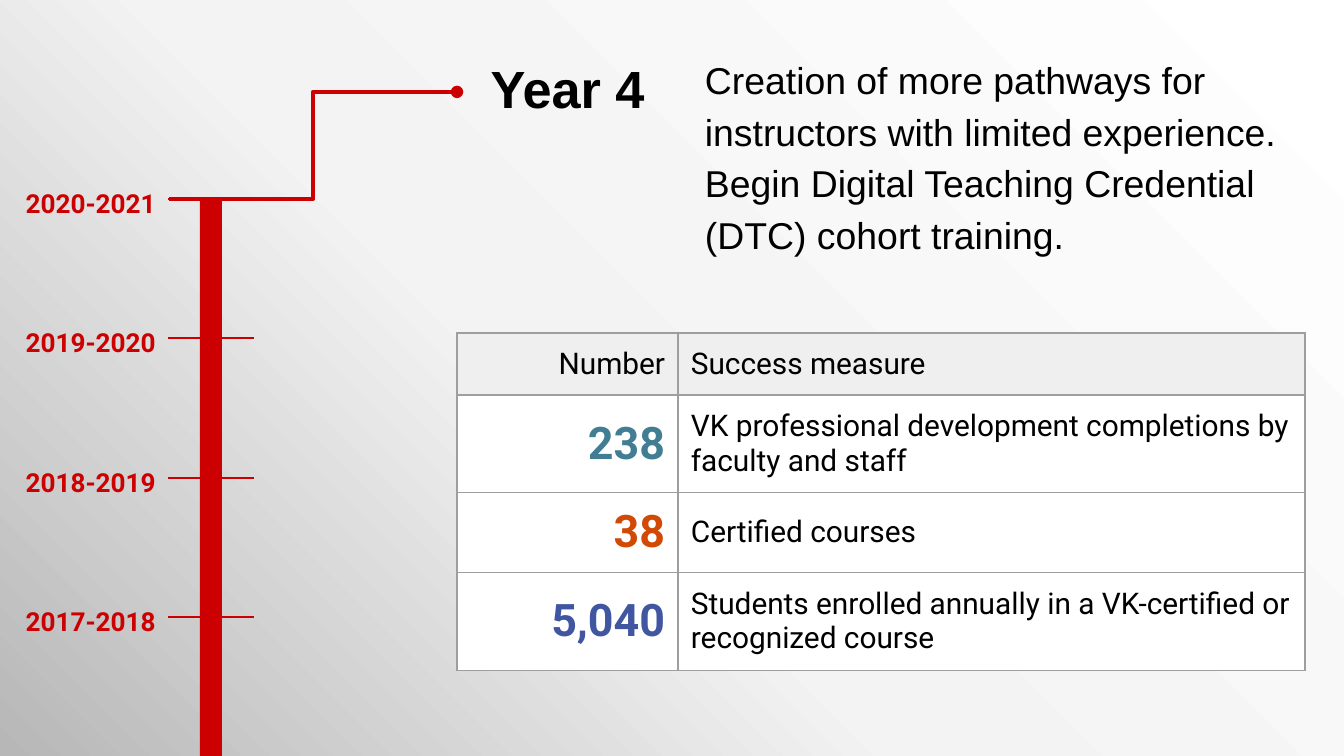
"""Builds the Year 4 timeline slide with its table of success measures."""
import copy

import lxml.etree
import pptx
import pptx.dml.color
import pptx.enum.shapes
import pptx.enum.text
import pptx.oxml.ns
import pptx.util

ANCHOR = pptx.enum.text.MSO_ANCHOR
ALIGN = pptx.enum.text.PP_ALIGN
CONNECTOR = pptx.enum.shapes.MSO_CONNECTOR
COLORS = {
    "black": "000000", "white": "FFFFFF", "red": "CC0000",
    "mist": "F3F3F3", "shade": "B7B7B7", "header": "EFEFEF", "border": "9E9E9E",
    "teal": "427E93", "orange": "D14905", "indigo": "4156A1",
}


def px(count):
    return pptx.util.Emu(round(count * 914400 / 134.4))


def rgb(name):
    return pptx.dml.color.RGBColor.from_string(COLORS[name])


def add_node(parent, tag, **attributes):
    return lxml.etree.SubElement(parent, pptx.oxml.ns.qn(tag), **attributes)


def write(frame, text, size=16, font="Roboto", color="black", bold=False, align=ALIGN.LEFT,
          anchor=ANCHOR.MIDDLE, spacing=1.0, after=0):
    frame.word_wrap = True
    frame.vertical_anchor = anchor
    para = frame.paragraphs[0]
    para.alignment = align
    para.line_spacing = spacing
    para.space_after = pptx.util.Pt(after)
    span = para.add_run()
    span.text = text
    span.font.size = pptx.util.Pt(size)
    span.font.name = font
    span.font.bold = bold
    span.font.color.rgb = rgb(color)


class Page:
    """Holds the style and the current slide."""

    def __init__(self, deck):
        self.slide = deck.slides.add_slide(deck.slide_layouts[5])
        self.shapes = self.slide.shapes
        self.accent = "red"
        self.inset = px(13)

    def pad(self, holder):
        holder.margin_left = holder.margin_right = self.inset
        holder.margin_top = holder.margin_bottom = self.inset

    def background(self, stops, angle):
        fill = self.slide.background.fill
        fill.gradient()
        fill.gradient_angle = angle
        stop_list = next(self.slide.element.iter(pptx.oxml.ns.qn("a:gsLst")))
        while len(stop_list) < len(stops):
            stop_list.append(copy.deepcopy(stop_list[0]))
        for stop, (position, color) in zip(fill.gradient_stops, stops):
            stop.position = position
            stop.color.rgb = rgb(color)

    def title(self, text, left, top, width, height, **style):
        box = self.shapes.title
        box.left, box.top, box.width, box.height = map(px, (left, top, width, height))
        box.text_frame.auto_size = pptx.enum.text.MSO_AUTO_SIZE.NONE
        self.pad(box.text_frame)
        write(box.text_frame, text, **style)

    def text(self, shapes, text, left, top, width, height, indent=13, **style):
        box = shapes.add_textbox(*map(px, (left, top, width, height)))
        self.pad(box.text_frame)
        box.text_frame.margin_left = px(indent)
        write(box.text_frame, text, **style)

    def bar(self, shapes, left, top, width, height):
        shape = shapes.add_shape(pptx.enum.shapes.MSO_SHAPE.RECTANGLE,
                                 *map(px, (left, top, width, height)))
        shape.shadow.inherit = False
        shape.fill.solid()
        shape.fill.fore_color.rgb = rgb(self.accent)
        shape.line.fill.background()

    def line(self, shapes, start, end, weight=1.5, kind=CONNECTOR.STRAIGHT, dot=False):
        line = shapes.add_connector(kind, *map(px, start + end))
        line.line.color.rgb = rgb(self.accent)
        line.line.width = pptx.util.Pt(weight)
        if dot:
            add_node(line.line._get_or_add_ln(), "a:tailEnd", type="oval")
        add_node(line.element.spPr, "a:effectLst")

    def milestone(self, label, top):
        shapes = self.shapes.add_group_shape().shapes
        self.bar(shapes, 200, top, 22, 139)
        self.line(shapes, (254, top), (168, top))
        self.text(shapes, label, 0, top - 29, 169, 60, size=14, color=self.accent,
                  bold=True, align=ALIGN.RIGHT, anchor=ANCHOR.TOP, spacing=1.15)

    def cell(self, cell, text, fill, **style):
        properties = cell._tc.get_or_add_tcPr()
        for side in ("a:lnL", "a:lnR", "a:lnT", "a:lnB"):
            border = add_node(properties, side, w=str(pptx.util.Pt(0.75)))
            add_node(add_node(border, "a:solidFill"), "a:srgbClr", val=COLORS["border"])
        cell.fill.solid()
        cell.fill.fore_color.rgb = rgb(fill)
        self.pad(cell)
        cell.vertical_anchor = ANCHOR.MIDDLE
        write(cell.text_frame, text, anchor=None, **style)

    def table(self, left, top, widths, heights, rows):
        table = self.shapes.add_table(len(heights), len(widths), px(left), px(top),
                                      px(sum(widths)), px(sum(heights))).table
        table.first_row = table.horz_banding = False
        for column, width in zip(table.columns, widths):
            column.width = px(width)
        for index, (height, (number, measure, fill, style)) in enumerate(zip(heights, rows)):
            table.rows[index].height = px(height)
            self.cell(table.cell(index, 0), number, fill, align=ALIGN.RIGHT, **style)
            self.cell(table.cell(index, 1), measure, fill)


def main():
    deck = pptx.Presentation()
    deck.slide_width, deck.slide_height = px(1344), px(756)
    page = Page(deck)
    page.background([(0, "white"), (0.57, "mist"), (1, "shade")], 225)
    page.title("Year 4", 457, 11, 221, 153, size=28, font="Arial", bold=True,
               align=ALIGN.CENTER)
    page.text(page.shapes, "Creation of more pathways for instructors with limited experience. "
              "Begin Digital Teaching Credential (DTC) cohort training.",
              678, 34, 627, 239, indent=27, size=20, font="Arial", spacing=1.15, after=10)
    measures = [
        ("238", "VK professional development completions by faculty and staff", "teal"),
        ("38", "Certified courses", "orange"),
        ("5,040", "Students enrolled annually in a VK-certified or recognized course", "indigo"),
    ]
    rows = [("Number", "Success measure", "header", {})]
    rows += [(number, measure, "white", {"size": 24, "color": color, "bold": True})
             for number, measure, color in measures]
    page.table(457, 333, [221, 627], [62, 95, 80, 95], rows)
    for index, year in enumerate(range(2020, 2016, -1)):
        page.milestone(f"{year}-{year + 1}", 199 + round(index * 139.3))
    page.line(page.shapes, (169, 199), (457, 92), weight=2.25, kind=CONNECTOR.ELBOW, dot=True)
    deck.save("out.pptx")


if __name__ == "__main__":
    main()
